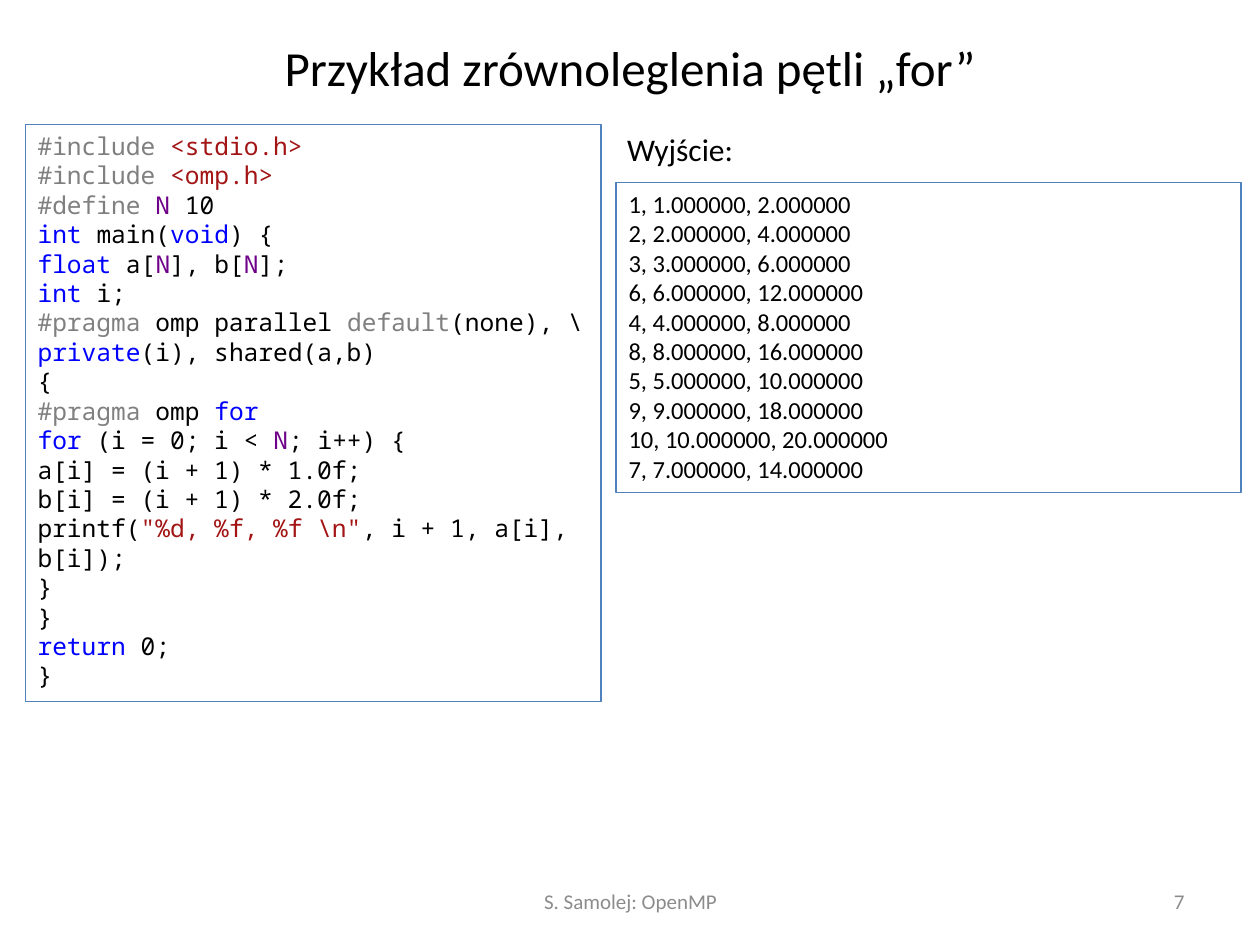
import pptx
import pptx.dml.color
import pptx.enum.shapes
import pptx.enum.text
import pptx.util

Inches = pptx.util.Inches
Pt = pptx.util.Pt
RGB = pptx.dml.color.RGBColor
ALIGN = pptx.enum.text.PP_ALIGN
ANCHOR = pptx.enum.text.MSO_ANCHOR

BLACK = RGB(0x00, 0x00, 0x00)
GRAY = RGB(0x80, 0x80, 0x80)
RED = RGB(0xA3, 0x15, 0x15)
PURPLE = RGB(0x6F, 0x00, 0x8A)
BLUE = RGB(0x00, 0x00, 0xFF)
MUTED = RGB(0x8C, 0x8C, 0x8C)
BORDER = RGB(0x4F, 0x81, 0xBD)

SANS = "Calibri"
MONO = "Noto Sans Mono"

# Each code line is a list of (text, colour) runs
CODE = [
    [("#include ", GRAY), ("<stdio.h>", RED)],
    [("#include ", GRAY), ("<omp.h>", RED)],
    [("#define ", GRAY), ("N", PURPLE), (" 10", BLACK)],
    [("int ", BLUE), ("main(", BLACK), ("void", BLUE), (") {", BLACK)],
    [("float", BLUE), (" a[", BLACK), ("N", PURPLE), ("], b[", BLACK),
     ("N", PURPLE), ("];", BLACK)],
    [("int", BLUE), (" i;", BLACK)],
    [("#pragma ", GRAY), ("omp parallel ", BLACK), ("default", GRAY),
     ("(none), \\", BLACK)],
    [("private", BLUE), ("(i), shared(a,b)", BLACK)],
    [("{", BLACK)],
    [("#pragma ", GRAY), ("omp ", BLACK), ("for", BLUE)],
    [("for", BLUE), (" (i = 0; i < ", BLACK), ("N", PURPLE),
     ("; i++) {", BLACK)],
    [("a[i] = (i + 1) * 1.0f;", BLACK)],
    [("b[i] = (i + 1) * 2.0f;", BLACK)],
    [("printf(", BLACK), ('"%d, %f, %f \\n"', RED),
     (", i + 1, a[i], b[i]);", BLACK)],
    [("}", BLACK)],
    [("}", BLACK)],
    [("return", BLUE), (" 0;", BLACK)],
    [("}", BLACK)],
]

# Order in which the threads print their results
ORDER = [1, 2, 3, 6, 4, 8, 5, 9, 10, 7]


class Deck:
    def __init__(self):
        self.file = pptx.Presentation()
        self.file.slide_width = Inches(10)
        self.file.slide_height = Inches(7.5)
        self.slide = self.file.slides.add_slide(self.file.slide_layouts[5])

    def text(self, shape, lines, size, font=SANS, align=ALIGN.LEFT,
             anchor=ANCHOR.TOP, pitch=None):
        frame = shape.text_frame
        frame.word_wrap = True
        frame.vertical_anchor = anchor
        for i, line in enumerate(lines):
            para = frame.add_paragraph() if i else frame.paragraphs[0]
            para.alignment = align
            if pitch:
                para.line_spacing = Pt(pitch)
            for words, color in line:
                run = para.add_run()
                run.text = words
                run.font.name = font
                run.font.size = Pt(size)
                run.font.color.rgb = color

    def title(self, words, x, y, w, h):
        shape = self.slide.shapes.title
        shape.left, shape.top = Inches(x), Inches(y)
        shape.width, shape.height = Inches(w), Inches(h)
        self.text(shape, [[(words, BLACK)]], 28, align=ALIGN.CENTER,
                  anchor=ANCHOR.MIDDLE)

    def label(self, words, x, y, w, h, size, color, **style):
        shape = self.slide.shapes.add_textbox(
            Inches(x), Inches(y), Inches(w), Inches(h))
        self.text(shape, [[(words, color)]], size, **style)

    def panel(self, lines, x, y, w, h, **style):
        shape = self.slide.shapes.add_shape(
            pptx.enum.shapes.MSO_SHAPE.RECTANGLE,
            Inches(x), Inches(y), Inches(w), Inches(h))
        shape.shadow.inherit = False
        shape.fill.background()
        shape.line.color.rgb = BORDER
        shape.line.width = Pt(0.75)
        self.text(shape, lines, 14, **style)


def main():
    deck = Deck()
    deck.title("Przykład zrównoleglenia pętli „for”", 0.5, 0.3, 9, 0.46)

    # Source code
    deck.panel(CODE, 0.2, 0.99, 4.57, 4.58, font=MONO, pitch=16.8)

    # Program output
    deck.label("Wyjście:", 4.88, 0.98, 4.33, 0.4, 18, BLACK)
    rows = [[(f"{n}, {n:.6f}, {2 * n:.6f}", BLACK)] for n in ORDER]
    deck.panel(rows, 4.89, 1.45, 4.96, 2.46)

    # Footer and slide number
    deck.label("S. Samolej: OpenMP", 3.42, 6.95, 3.17, 0.4, 12, MUTED,
               align=ALIGN.CENTER, anchor=ANCHOR.MIDDLE)
    deck.label("7", 7.17, 6.95, 2.33, 0.4, 12, MUTED,
               align=ALIGN.RIGHT, anchor=ANCHOR.MIDDLE)

    deck.file.save("out.pptx")


if __name__ == "__main__":
    main()
